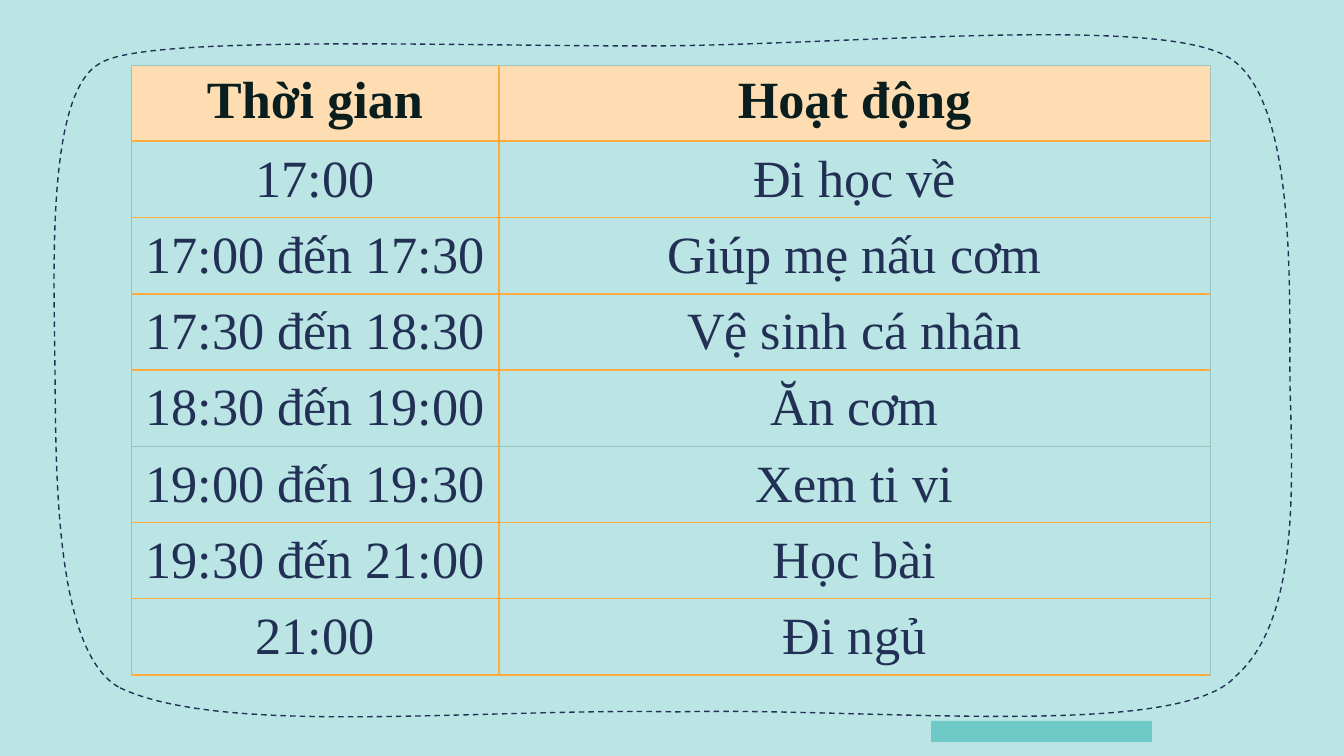
from dataclasses import dataclass

from lxml import etree
from pptx import Presentation
from pptx import util as u
from pptx.dml.color import RGBColor
from pptx.enum import dml, shapes, text
from pptx.oxml import ns

EMU_PER_PX = 914400 / 134.4


def px(length):
    return u.Emu(round(length * EMU_PER_PX))


@dataclass(frozen=True)
class Theme:
    background: str = "BAE5E4"
    accent: str = "6FC9C7"
    ink: str = "213054"
    header_ink: str = "0B1E1E"
    header_fill: str = "FFDDB3"
    grid: str = "FFAB40"
    edge: str = "9CC3BE"
    font: str = "Times New Roman"
    body_size: int = 28
    outline_width: float = 0.75
    grid_width: float = 1
    edge_width: float = 0.5


SCHEDULE = [
    ("Thời gian", "Hoạt động"),
    ("17:00", "Đi học về"),
    ("17:00 đến 17:30", "Giúp mẹ nấu cơm"),
    ("17:30 đến 18:30", "Vệ sinh cá nhân"),
    ("18:30 đến 19:00", "Ăn cơm"),
    ("19:00 đến 19:30", "Xem ti vi"),
    ("19:30 đến 21:00", "Học bài"),
    ("21:00", "Đi ngủ"),
]
THIN_RULE_BELOW = 4

FRAME_BOX = (54, 35, 1238, 681)
FRAME_START = (120, 688)
FRAME_CURVES = [
    ((224, 737), (482, 708), (677, 712)),
    ((863, 707), (1180, 741), (1236, 676)),
    ((1298, 621), (1293, 491), (1290, 387)),
    ((1289, 284), (1297, 90), (1224, 55)),
    ((1149, 17), (853, 44), (665, 46)),
    ((478, 47), (145, 34), (101, 63)),
    ((46, 90), (54, 270), (55, 370)),
    ((56, 468), (54, 653), FRAME_START),
]


class SlideBuilder:
    def __init__(self, page, theme):
        self.page = page
        self.theme = theme

    def background(self):
        fill = self.page.background.fill
        fill.solid()
        fill.fore_color.rgb = RGBColor.from_string(self.theme.background)

    def dashed_outline(self, box, start, curves):
        left, top, width, height = box
        builder = self.page.shapes.build_freeform(*start, scale=EMU_PER_PX)
        builder.add_line_segments([curve[-1] for curve in curves], close=True)
        outline = builder.convert_to_shape()
        outline.left, outline.top = px(left), px(top)
        outline.width, outline.height = px(width), px(height)
        self.bend(outline, box, start, curves)
        outline.shadow.inherit = False
        outline.fill.background()
        outline.line.color.rgb = RGBColor.from_string(self.theme.ink)
        outline.line.width = u.Pt(self.theme.outline_width)
        outline.line.dash_style = dml.MSO_LINE.DASH

    def bend(self, outline, box, start, curves):
        left, top, width, height = box
        route = outline._element.find(f".//{ns.qn('a:path')}")
        for segment in list(route):
            route.remove(segment)
        route.set("w", str(width))
        route.set("h", str(height))
        for tag, points in [("moveTo", [start])] + [("cubicBezTo", c) for c in curves]:
            segment = etree.SubElement(route, ns.qn(f"a:{tag}"))
            for x, y in points:
                etree.SubElement(segment, ns.qn("a:pt"), x=str(x - left), y=str(y - top))
        etree.SubElement(route, ns.qn("a:close"))

    def bar(self, left, top, width, height):
        bar = self.page.shapes.add_shape(
            shapes.MSO_SHAPE.RECTANGLE, px(left), px(top), px(width), px(height))
        bar.shadow.inherit = False
        bar.fill.solid()
        bar.fill.fore_color.rgb = RGBColor.from_string(self.theme.accent)
        bar.line.fill.background()

    def table(self, left, top, widths, height, rows):
        frame = self.page.shapes.add_table(
            len(rows), len(widths), px(left), px(top), px(sum(widths)), px(height))
        table = frame.table
        table.horz_banding = False
        for column, width in zip(table.columns, widths):
            column.width = px(width)
        for r, values in enumerate(rows):
            table.rows[r].height = px(height / len(rows))
            for c, value in enumerate(values):
                cell = table.cell(r, c)
                thin = {
                    "L": c == 0,
                    "R": c == len(widths) - 1,
                    "T": r in (0, THIN_RULE_BELOW + 1),
                    "B": r == THIN_RULE_BELOW,
                }
                self.borders(cell, thin)
                self.cell(cell, value, header=r == 0)

    def cell(self, cell, value, header):
        theme = self.theme
        if header:
            cell.fill.solid()
            cell.fill.fore_color.rgb = RGBColor.from_string(theme.header_fill)
        else:
            cell.fill.background()
            cell.vertical_anchor = text.MSO_ANCHOR.MIDDLE
        para = cell.text_frame.paragraphs[0]
        para.alignment = text.PP_ALIGN.CENTER
        span = para.add_run()
        span.text = value
        span.font.name = theme.font
        span.font.size = u.Pt(theme.body_size)
        span.font.bold = header
        span.font.color.rgb = RGBColor.from_string(
            theme.header_ink if header else theme.ink)

    def borders(self, cell, thin):
        theme = self.theme
        properties = cell._tc.get_or_add_tcPr()
        for side, is_thin in thin.items():
            width = theme.edge_width if is_thin else theme.grid_width
            line = etree.SubElement(properties, ns.qn(f"a:ln{side}"), w=str(u.Pt(width)))
            fill = etree.SubElement(line, ns.qn("a:solidFill"))
            etree.SubElement(fill, ns.qn("a:srgbClr"),
                             val=theme.edge if is_thin else theme.grid)


def main():
    deck = Presentation()
    deck.slide_width, deck.slide_height = px(1344), px(756)
    page = deck.slides.add_slide(deck.slide_layouts[6])
    builder = SlideBuilder(page, Theme())
    builder.background()
    builder.dashed_outline(FRAME_BOX, FRAME_START, FRAME_CURVES)
    builder.bar(931, 721, 221, 21)
    builder.table(131, 65, (368, 711), 610, SCHEDULE)
    deck.save("out.pptx")


if __name__ == "__main__":
    main()
